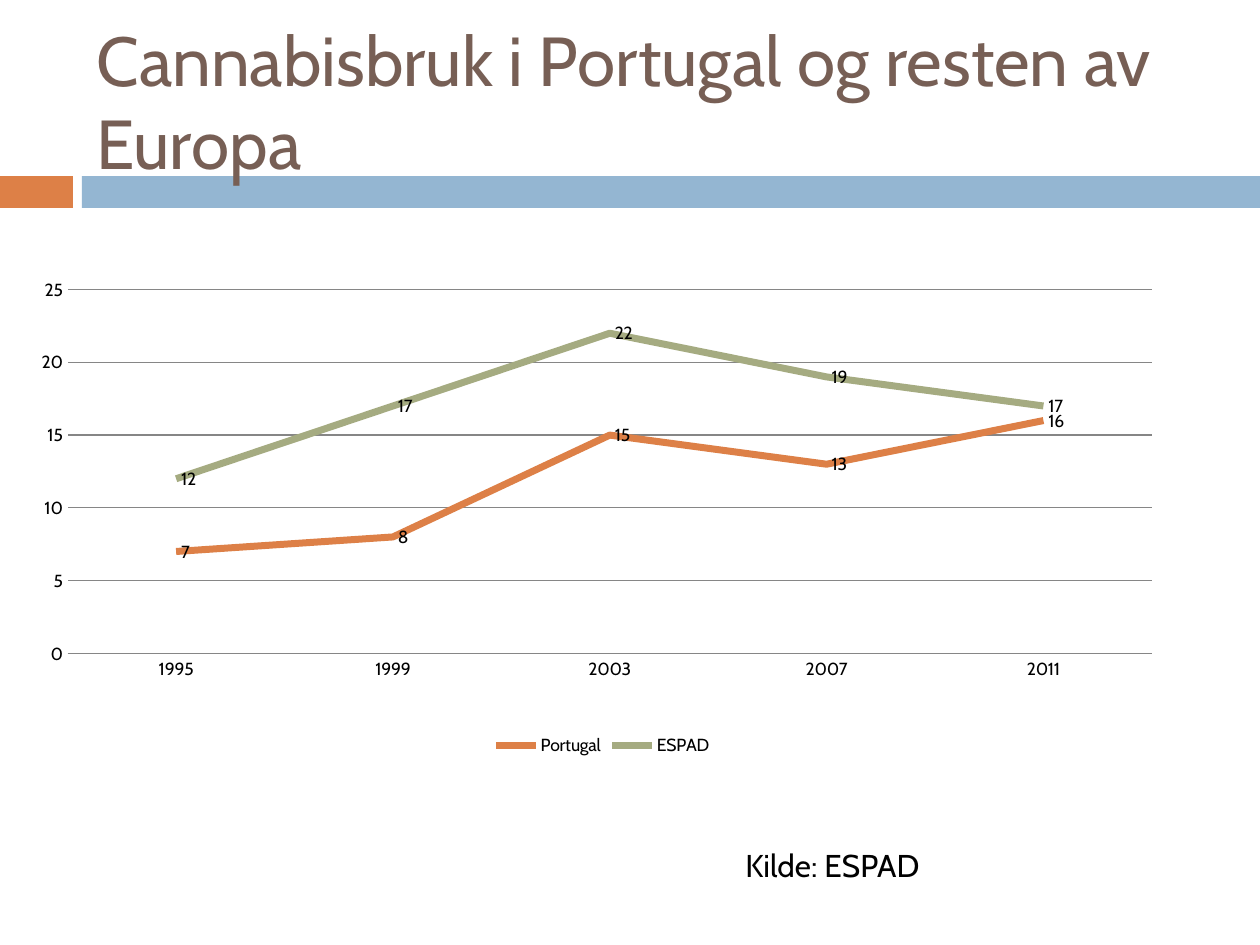
from lxml.etree import SubElement
from pptx import Presentation
from pptx.chart.data import CategoryChartData
from pptx.dml.color import RGBColor
from pptx.enum.chart import XL_CHART_TYPE, XL_LABEL_POSITION, XL_LEGEND_POSITION, XL_TICK_MARK
from pptx.enum.shapes import MSO_SHAPE
from pptx.enum.text import MSO_ANCHOR, MSO_AUTO_SIZE, PP_ALIGN
from pptx.oxml.ns import qn
from pptx.util import Emu, Pt

# Content
TITLE = "Cannabisbruk i Portugal og resten av Europa"
SOURCE = "Kilde: ESPAD"
YEARS = ["1995", "1999", "2003", "2007", "2011"]
SERIES = [
    ("Portugal", [7, 8, 15, 13, 16], "DD8047"),
    ("ESPAD", [12, 17, 22, 19, 17], "A5AB81"),
]

# Places in px: left, top, width, height
BARS = [((0, 176, 73, 32), "DD8047"), ((82, 176, 1178, 32), "94B6D2")]
TITLE_AT = (84, 32, 1124, 136)
CHART_AT = (-8, 239, 1221, 522)
SOURCE_AT = (733, 840, 300, 50)
PLOT = {"x": 0.062, "y": 0.097, "w": 0.888, "h": 0.697}  # shares of the chart
FONT = "Cabin"
GRID = "868686"


def px(value):
    return Emu(value * 914400 // 126)


def color(hex_string):
    return RGBColor.from_string(hex_string)


def style(font, size, hex_string):
    font.name = FONT
    font.size = Pt(size)
    font.color.rgb = color(hex_string)


def draw_line(line, hex_string, width):
    line.color.rgb = color(hex_string)
    line.width = Pt(width)


def set_plot_area(chart):
    plot_area = chart.plots[0]._element.getparent()
    layout = plot_area.find(qn("c:layout"))
    if layout is None:
        layout = SubElement(plot_area, qn("c:layout"))
        plot_area.insert(0, layout)
    manual = SubElement(layout, qn("c:manualLayout"))
    settings = {"layoutTarget": "inner", "xMode": "edge", "yMode": "edge", **PLOT}
    for name, value in settings.items():
        SubElement(manual, qn(f"c:{name}")).set("val", str(value))


deck = Presentation()
deck.slide_width, deck.slide_height = px(1260), px(945)
page = deck.slides.add_slide(deck.slide_layouts[5])

# Coloured bars
for place, fill in BARS:
    bar = page.shapes.add_shape(MSO_SHAPE.RECTANGLE, *map(px, place))
    bar.shadow.inherit = False
    bar.fill.solid()
    bar.fill.fore_color.rgb = color(fill)
    bar.line.fill.background()

# Title, in front of the bars
title = page.shapes.title
title.left, title.top, title.width, title.height = map(px, TITLE_AT)
title.element.getparent().append(title.element)
frame = title.text_frame
frame.text = TITLE
frame.word_wrap = True
frame.auto_size = MSO_AUTO_SIZE.NONE
frame.vertical_anchor = MSO_ANCHOR.MIDDLE
frame.paragraphs[0].alignment = PP_ALIGN.LEFT
style(frame.paragraphs[0].runs[0].font, 39.6, "775F55")

# Line chart
data = CategoryChartData()
data.categories = YEARS
for name, values, _ in SERIES:
    data.add_series(name, values)
chart = page.shapes.add_chart(XL_CHART_TYPE.LINE, *map(px, CHART_AT), data).chart
style(chart.font, 10, "000000")
chart.has_title = False
chart.has_legend = True
chart.legend.position = XL_LEGEND_POSITION.BOTTOM
chart.legend.include_in_layout = False
set_plot_area(chart)

plot = chart.plots[0]
plot.vary_by_categories = False
for series, (_, _, hex_string) in zip(plot.series, SERIES):
    series.smooth = False
    draw_line(series.format.line, hex_string, 4)
    labels = series.data_labels
    labels.show_value = True
    labels.position = XL_LABEL_POSITION.RIGHT
    style(labels.font, 10, "000000")

# Axes
for axis in (chart.category_axis, chart.value_axis):
    axis.major_tick_mark = axis.minor_tick_mark = XL_TICK_MARK.NONE
chart.category_axis.has_major_gridlines = False
draw_line(chart.category_axis.format.line, GRID, 0.75)
values_axis = chart.value_axis
values_axis.minimum_scale, values_axis.maximum_scale, values_axis.major_unit = 0, 25, 5
values_axis.format.line.fill.background()
values_axis.has_major_gridlines = True
draw_line(values_axis.major_gridlines.format.line, GRID, 0.75)

# Source note
box = page.shapes.add_textbox(*map(px, SOURCE_AT))
box.text_frame.text = SOURCE
box.text_frame.word_wrap = True
box.text_frame.auto_size = MSO_AUTO_SIZE.SHAPE_TO_FIT_TEXT
style(box.text_frame.paragraphs[0].runs[0].font, 18, "000000")

deck.save("out.pptx")
